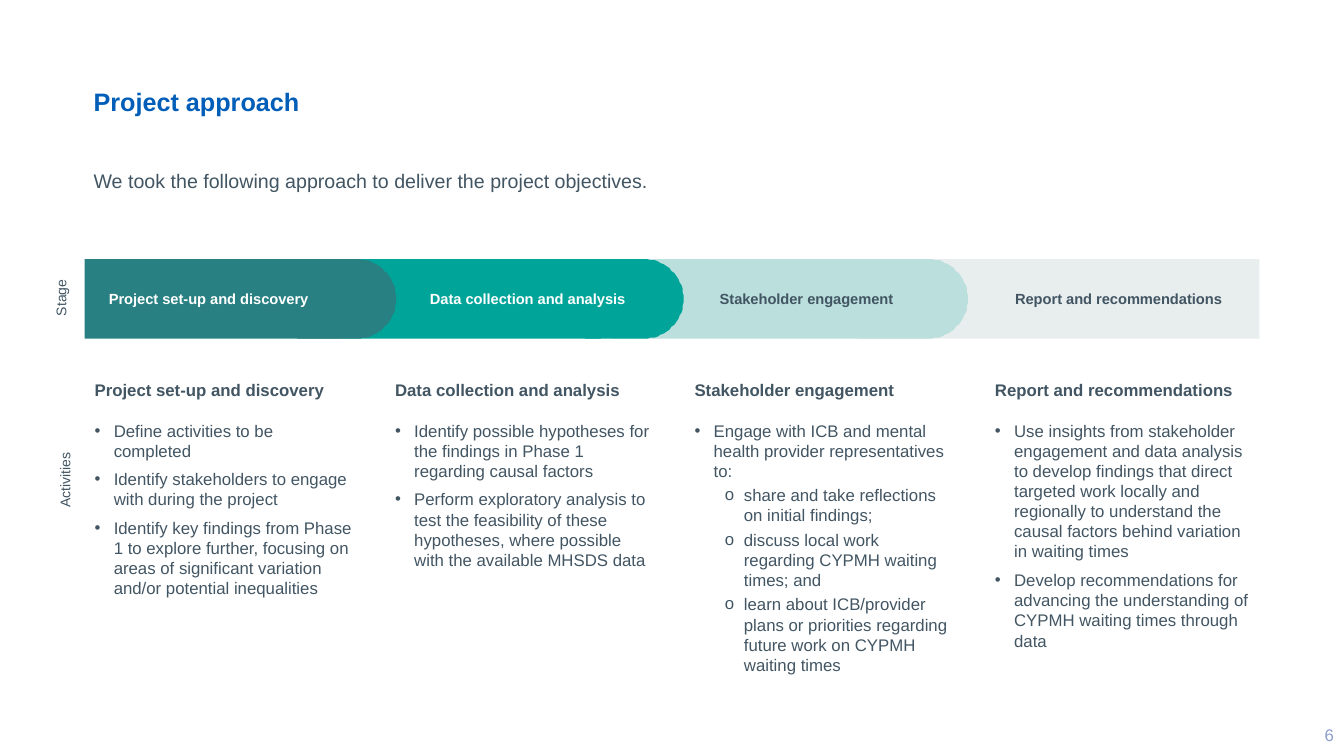
import dataclasses
import math
import typing

import lxml.etree
import pptx
import pptx.dml.color
import pptx.enum.shapes
import pptx.enum.text
import pptx.oxml.ns
import pptx.util

RGBColor = pptx.dml.color.RGBColor
ALIGN = pptx.enum.text.PP_ALIGN
ANCHOR = pptx.enum.text.MSO_ANCHOR

EMU_PER_PX = 9144
FONT = "Arial"

WHITE = RGBColor(0xFF, 0xFF, 0xFF)
BLUE = RGBColor(0x00, 0x5E, 0xB8)
SLATE = RGBColor(0x42, 0x55, 0x63)
LAVENDER = RGBColor(0x8C, 0x9D, 0xCD)
DARK_TEAL = RGBColor(0x29, 0x80, 0x82)
TEAL = RGBColor(0x00, 0xA4, 0x99)
PALE_TEAL = RGBColor(0xBA, 0xDF, 0xDC)
PALE_GREY = RGBColor(0xE8, 0xED, 0xEE)

BAND_TOP, BAND_HEIGHT = 257, 79
BAR_WIDTH, CAP_WIDTH = 256, 98
COLUMN_LEFT, COLUMN_TOP, COLUMN_WIDTH = 84, 372, 276
LAST_COLUMN_OFFSET = 893
HEADING_GAP = 14.4


class Box(typing.NamedTuple):
    left: int
    top: int
    width: int
    height: int

    def emu(self) -> list[int]:
        return [value * EMU_PER_PX for value in self]


@dataclasses.dataclass(frozen=True)
class Bullet:
    text: str
    space_after: int = 6
    level: int = 0


@dataclasses.dataclass(frozen=True)
class Stage:
    name: str
    bar_left: int
    cap_left: int | None
    fill: RGBColor
    label_box: Box
    label_color: RGBColor
    label_align: ALIGN
    bullets: tuple[Bullet, ...]


STAGES = (
    Stage("Project set-up and discovery", 84, 295, DARK_TEAL,
          Box(88, 259, 276, 75), WHITE, ALIGN.LEFT, (
              Bullet("Define activities to be completed"),
              Bullet("Identify stakeholders to engage with during the project"),
              Bullet("Identify key findings from Phase 1 to explore further, focusing on "
                     "areas of significant variation and/or potential inequalities"))),
    Stage("Data collection and analysis", 340, 580, TEAL,
          Box(405, 268, 237, 57), WHITE, ALIGN.CENTER, (
              Bullet("Identify possible hypotheses for the findings in Phase 1 "
                     "regarding causal factors"),
              Bullet("Perform exploratory analysis to test the feasibility of these "
                     "hypotheses, where possible with the available MHSDS data"))),
    Stage("Stakeholder engagement", 606, 862, PALE_TEAL,
          Box(691, 268, 218, 57), SLATE, ALIGN.CENTER, (
              Bullet("Engage with ICB and mental health provider representatives to:", 3),
              Bullet("share and take reflections on initial findings;", 3, 1),
              Bullet("discuss local work regarding CYPMH waiting times; and", 3, 1),
              Bullet("learn about ICB/provider plans or priorities regarding future "
                     "work on CYPMH waiting times", 0, 1))),
    Stage("Report and recommendations", 851, None, PALE_GREY,
          Box(970, 257, 279, 79), SLATE, ALIGN.CENTER, (
              Bullet("Use insights from stakeholder engagement and data analysis to "
                     "develop findings that direct targeted work locally and regionally "
                     "to understand the causal factors behind variation in waiting times"),
              Bullet("Develop recommendations for advancing the understanding of CYPMH "
                     "waiting times through data", 0))),
)


def paint(shape, color: RGBColor) -> None:
    shape.shadow.inherit = False
    shape.fill.solid()
    shape.fill.fore_color.rgb = color
    shape.line.fill.background()


def add_bar(slide, box: Box, color: RGBColor) -> None:
    shape = slide.shapes.add_shape(pptx.enum.shapes.MSO_SHAPE.RECTANGLE, *box.emu())
    paint(shape, color)


def add_cap(slide, left: int, color: RGBColor) -> None:
    """Draw a bar end whose right side is a half circle."""
    radius = BAND_HEIGHT / 2
    center_x = left + CAP_WIDTH - radius
    center_y = BAND_TOP + radius
    angles = [math.radians(degrees) for degrees in range(-90, 91, 5)]
    arc = [(center_x + radius * math.cos(angle), center_y + radius * math.sin(angle))
           for angle in angles]
    builder = slide.shapes.build_freeform(left, BAND_TOP, scale=EMU_PER_PX)
    builder.add_line_segments(arc + [(left, BAND_TOP + BAND_HEIGHT)], close=True)
    paint(builder.convert_to_shape(), color)


def write(paragraph, text: str, *, size: float, color: RGBColor = SLATE, bold: bool = False,
          align: ALIGN = ALIGN.LEFT, space_after: float = 0,
          line_spacing: float | None = None) -> None:
    paragraph.alignment = align
    paragraph.space_after = pptx.util.Pt(space_after)
    paragraph.line_spacing = line_spacing
    run = paragraph.add_run()
    run.text = text
    run.font.name = FONT
    run.font.size = pptx.util.Pt(size)
    run.font.bold = bold
    run.font.color.rgb = color


def add_text(slide, box: Box, text: str, *, anchor: ANCHOR = ANCHOR.TOP,
             rotation: int = 0, **text_format):
    shape = slide.shapes.add_textbox(*box.emu())
    shape.rotation = rotation
    frame = shape.text_frame
    frame.word_wrap = True
    frame.vertical_anchor = anchor
    write(frame.paragraphs[0], text, **text_format)
    return frame


def add_bullet(frame, bullet: Bullet) -> None:
    paragraph = frame.add_paragraph()
    paragraph.level = bullet.level
    properties = paragraph._p.get_or_add_pPr()
    properties.set("marL", str((19 + 30 * bullet.level) * EMU_PER_PX))
    properties.set("indent", str(-19 * EMU_PER_PX))
    for tag, name, value in (("a:buFont", "typeface", FONT),
                             ("a:buChar", "char", "•o"[bullet.level])):
        element = lxml.etree.SubElement(properties, pptx.oxml.ns.qn(tag))
        element.set(name, value)
    write(paragraph, bullet.text, size=12, space_after=bullet.space_after)


def add_stage_band(slide) -> None:
    for stage in reversed(STAGES):
        right = stage.bar_left + BAR_WIDTH
        if stage.cap_left is None:
            right = stage.label_box.left + stage.label_box.width
        add_bar(slide, Box(stage.bar_left, BAND_TOP, right - stage.bar_left, BAND_HEIGHT),
                stage.fill)
        if stage.cap_left is not None:
            add_cap(slide, stage.cap_left, stage.fill)
    for stage in STAGES:
        frame = add_text(slide, stage.label_box, stage.name, size=10.5, bold=True,
                         color=stage.label_color, align=stage.label_align,
                         anchor=ANCHOR.MIDDLE)
        frame.margin_left = frame.margin_right = 20 * EMU_PER_PX


def add_activity_columns(slide) -> None:
    for index, stage in enumerate(STAGES):
        left = COLUMN_LEFT + round(index * LAST_COLUMN_OFFSET / (len(STAGES) - 1))
        frame = add_text(slide, Box(left, COLUMN_TOP, COLUMN_WIDTH, 326), stage.name,
                         size=12, bold=True, space_after=HEADING_GAP)
        for bullet in stage.bullets:
            add_bullet(frame, bullet)


def main() -> None:
    presentation = pptx.Presentation()
    presentation.slide_width = 1333 * EMU_PER_PX
    presentation.slide_height = 750 * EMU_PER_PX
    slide = presentation.slides.add_slide(presentation.slide_layouts[6])

    add_text(slide, Box(83, 84, 525, 80), "Project approach",
             size=18, bold=True, color=BLUE, line_spacing=0.9)
    add_text(slide, Box(83, 165, 1167, 35),
             "We took the following approach to deliver the project objectives.",
             size=14, line_spacing=0.9)
    add_text(slide, Box(22, 282, 77, 27), "Stage", size=10, align=ALIGN.CENTER, rotation=270)
    add_text(slide, Box(-40, 463, 209, 27), "Activities", size=10, align=ALIGN.CENTER,
             rotation=270)
    add_stage_band(slide)
    add_activity_columns(slide)
    add_text(slide, Box(1236, 709, 97, 40), "6", size=12, color=LAVENDER,
             align=ALIGN.RIGHT, anchor=ANCHOR.MIDDLE)
    presentation.save("out.pptx")


if __name__ == "__main__":
    main()
